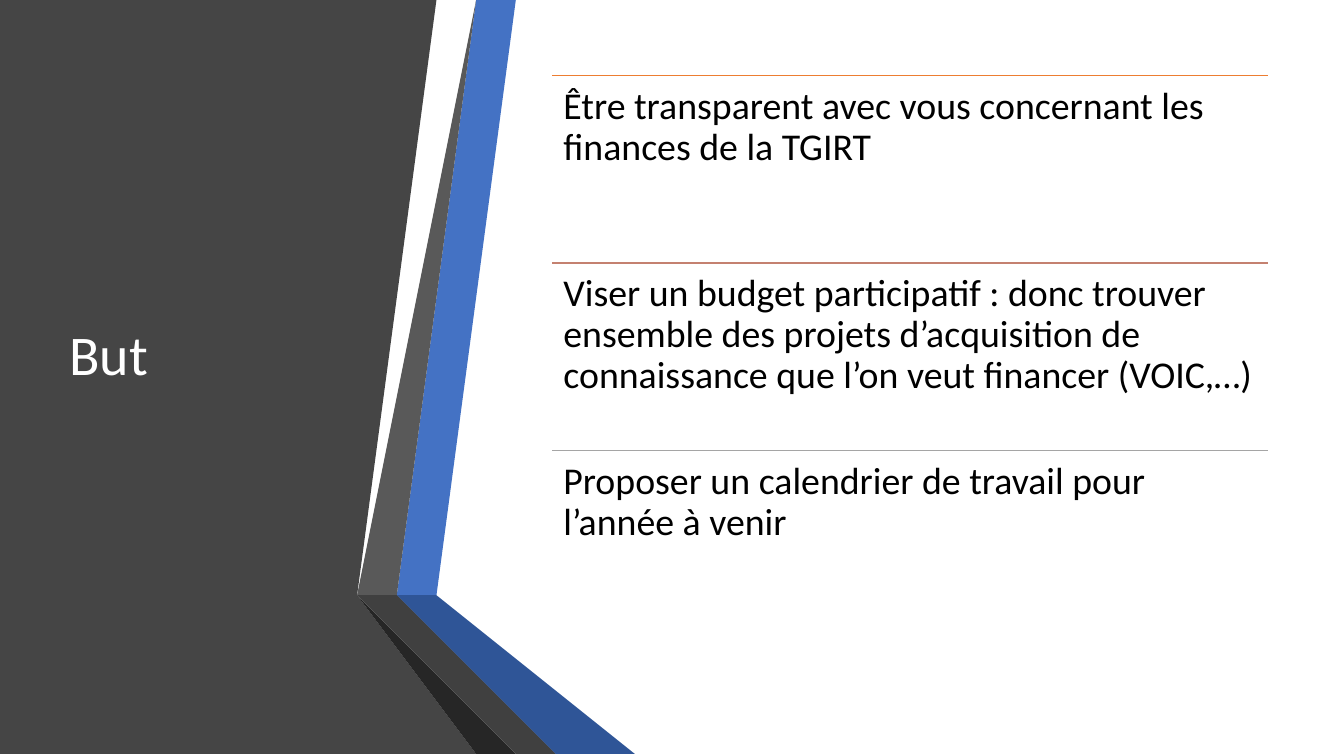
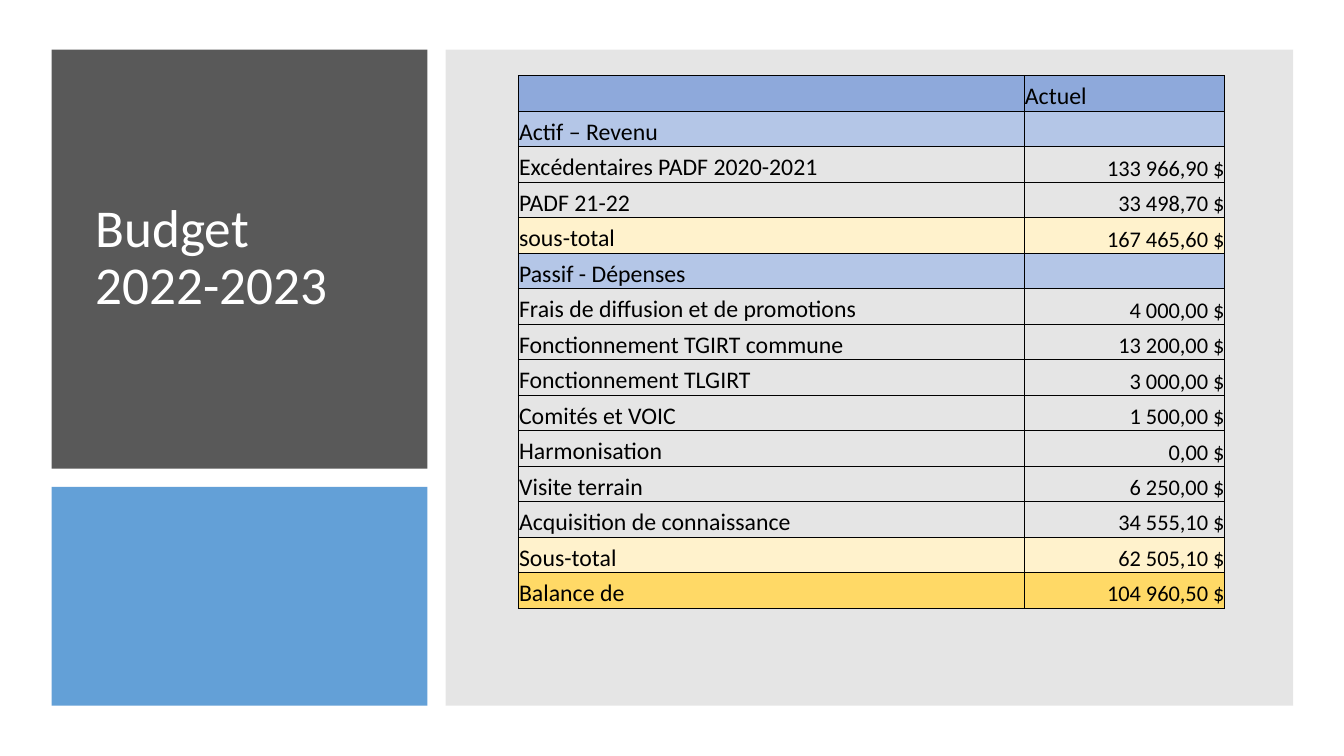
from lxml import etree
from pptx import Presentation
from pptx import util as u
from pptx.dml.color import RGBColor
from pptx.enum import shapes, text
from pptx.oxml.ns import qn

Cm, Pt = u.Cm, u.Pt
FONT = "Calibri"
WHITE = RGBColor(0xFF, 0xFF, 0xFF)
BLACK = RGBColor(0x00, 0x00, 0x00)
PANEL = RGBColor(0x45, 0x45, 0x45)
GREY = RGBColor(0x59, 0x59, 0x59)
GREY_FOLD = RGBColor(0x40, 0x40, 0x40)
GREY_EDGE = RGBColor(0x26, 0x26, 0x26)
BLUE = RGBColor(0x44, 0x72, 0xC4)
BLUE_FOLD = RGBColor(0x2F, 0x55, 0x97)
BLUE_EDGE = RGBColor(0x20, 0x38, 0x64)
SKY = RGBColor(0x5B, 0x9B, 0xD5)
MID_GREY = RGBColor(0x80, 0x80, 0x80)
ORANGE = RGBColor(0xED, 0x7D, 0x31)
ROSE = RGBColor(0xC4, 0x81, 0x70)
SILVER = RGBColor(0xA5, 0xA5, 0xA5)
HEADER = RGBColor(0x8E, 0xA9, 0xDB)
SECTION = RGBColor(0xB4, 0xC6, 0xE7)
SUBTOTAL = RGBColor(0xFF, 0xF2, 0xCC)
BALANCE = RGBColor(0xFF, 0xD9, 0x66)

WIDTH, HEIGHT = 33.87, 19.05

# Content: goals with the colour of the rule above each
GOALS = [
    ("Être transparent avec vous concernant les finances de la TGIRT", ORANGE),
    ("Viser un budget participatif : donc trouver ensemble des projets "
     "d’acquisition de connaissance que l’on veut financer (VOIC,…)", ROSE),
    ("Proposer un calendrier de travail pour l’année à venir", SILVER),
]

# Content: budget rows as label, amount, fill
BUDGET = [
    ("", "Actuel", HEADER),
    ("Actif – Revenu", "", SECTION),
    ("Excédentaires PADF 2020-2021", "133 966,90 $", None),
    ("PADF 21-22", "33 498,70 $", None),
    ("sous-total", "167 465,60 $", SUBTOTAL),
    ("Passif - Dépenses", "", SECTION),
    ("Frais de diffusion et de promotions", "4 000,00 $", None),
    ("Fonctionnement TGIRT commune", "13 200,00 $", None),
    ("Fonctionnement TLGIRT", "3 000,00 $", None),
    ("Comités et VOIC", "1 500,00 $", None),
    ("Harmonisation", "0,00 $", None),
    ("Visite terrain", "6 250,00 $", None),
    ("Acquisition de connaissance", "34 555,10 $", None),
    ("Sous-total", "62 505,10 $", SUBTOTAL),
    ("Balance de", "104 960,50 $", BALANCE),
]

# Folded ribbon: outlines in centimetres, from back to front
RIBBON = [
    (PANEL, [(0, 0), (11.4, 0), (9.04, 14.62), (12.24, HEIGHT), (0, HEIGHT)]),
    (BLUE, [(10.06, 14.68), (10.74, 14.81), (13.18, 0), (12.47, 0)]),
    (GREY, [(12.32, 0), (11.61, 0), (9.22, 14.55), (9.91, 14.66)]),
    (GREY_EDGE, [(9.22, 14.55), (12.47, HEIGHT), (12.62, HEIGHT)]),
    (BLUE_EDGE, [(10.06, 14.71), (14.07, HEIGHT), (14.22, HEIGHT)]),
    (BLUE_FOLD, [(10.06, 14.68), (14.22, HEIGHT), (15.98, HEIGHT), (10.74, 14.81)]),
    (GREY_FOLD, [(9.22, 14.55), (12.62, HEIGHT), (13.92, HEIGHT),
                 (10.03, 14.81), (9.91, 14.66)]),
]


def paint(shape, color, opacity=100):
    shape.shadow.inherit = False
    shape.fill.solid()
    shape.fill.fore_color.rgb = color
    shape.line.fill.background()
    if opacity < 100:
        srgb = shape.fill._xPr.find(".//" + qn("a:srgbClr"))
        etree.SubElement(srgb, qn("a:alpha"), val=str(opacity * 1000))


def add_polygon(page, color, points):
    builder = page.shapes.build_freeform(*points[0], scale=float(Cm(1)))
    builder.add_line_segments(points[1:], close=True)
    paint(builder.convert_to_shape(), color)


def add_tile(page, left, top, width, height, color, opacity=100):
    tile = page.shapes.add_shape(shapes.MSO_SHAPE.RECTANGLE, Cm(left), Cm(top),
                                 Cm(width), Cm(height))
    paint(tile, color, opacity)


def add_span(para, words, size, color):
    span = para.add_run()
    span.text = words
    span.font.name = FONT
    span.font.size = Pt(size)
    span.font.color.rgb = color


def add_text(page, area, lines, size, color, anchor):
    box = page.shapes.add_textbox(*[Cm(length) for length in area])
    frame = box.text_frame
    frame.word_wrap = True
    frame.vertical_anchor = anchor
    para = frame.paragraphs[0]
    para.line_spacing = 0.9
    for index, line in enumerate(lines):
        if index:
            para.add_line_break()
        add_span(para, line, size, color)
    return frame


def add_title(page, area, lines, size):
    add_text(page, area, lines, size, WHITE, text.MSO_ANCHOR.MIDDLE)


def add_rule(page, left, top, width, color):
    rule = page.shapes.add_connector(shapes.MSO_CONNECTOR.STRAIGHT, Cm(left), Cm(top),
                                     Cm(left + width), Cm(top))
    rule.line.color.rgb = color
    rule.line.width = Pt(1)
    etree.SubElement(rule._element.spPr, qn("a:effectLst"))


def add_borders(cell):
    props = cell._tc.get_or_add_tcPr()
    for index, side in enumerate(("lnL", "lnR", "lnT", "lnB")):
        border = etree.Element(qn("a:" + side), w=str(Pt(0.5)))
        fill = etree.SubElement(border, qn("a:solidFill"))
        etree.SubElement(fill, qn("a:srgbClr"), val=str(BLACK))
        props.insert(index, border)


def fill_cell(cell, words, color, is_amount):
    cell.vertical_anchor = text.MSO_ANCHOR.BOTTOM
    inset = Cm(0 if is_amount else 0.02)
    cell.margin_left = cell.margin_right = cell.margin_top = inset
    cell.margin_bottom = 0
    if color is None:
        cell.fill.background()
    else:
        cell.fill.solid()
        cell.fill.fore_color.rgb = color
    add_borders(cell)
    if words:
        para = cell.text_frame.paragraphs[0]
        if is_amount:
            para.alignment = text.PP_ALIGN.RIGHT
        add_span(para, words, 16 if is_amount else 17, BLACK)


def build_goals(page):
    for color, points in RIBBON:
        add_polygon(page, color, points)
    add_title(page, (1.5, 1.91, 7.72, 14.17), ["But"], 40)

    # Ruled list at an even pitch
    left, top, width, pitch = 13.92, 1.91, 18.03, 4.72
    for index, (goal, color) in enumerate(GOALS):
        row_top = top + index * pitch
        add_rule(page, left, row_top, width, color)
        frame = add_text(page, (left, row_top, width, pitch), [goal], 27, BLACK,
                         text.MSO_ANCHOR.TOP)
        frame.margin_left = frame.margin_right = Cm(0.28)
        frame.margin_top = frame.margin_bottom = Cm(0.28)


def build_budget(page):
    # Tiles: title over accent on the left, table panel on the right
    left, top, gap = 1.3, 1.25, 0.46
    side_width, title_height, accent_height = 9.47, 10.56, 5.51
    panel_left = left + side_width + gap
    add_tile(page, left, top, side_width, title_height, GREY)
    add_title(page, (2.16, 2.03, 7.9, 8.99), ["Budget", "2022-2023"], 38)
    add_tile(page, left, top + title_height + gap, side_width, accent_height, SKY, 95)
    add_tile(page, panel_left, top, 21.36, title_height + gap + accent_height,
             MID_GREY, 20)

    # Budget table
    columns = (12.75, 5.05)
    table = page.shapes.add_table(len(BUDGET), len(columns), Cm(13.06), Cm(1.91),
                                  Cm(sum(columns)), Cm(13.42)).table
    table.first_row = table.horz_banding = False
    for column, width in zip(table.columns, columns):
        column.width = Cm(width)
    for row, (label, amount, color) in enumerate(BUDGET):
        fill_cell(table.cell(row, 0), label, color, False)
        fill_cell(table.cell(row, 1), amount, color, amount.endswith("$"))


def main():
    deck = Presentation()
    deck.slide_width, deck.slide_height = Cm(WIDTH), Cm(HEIGHT)
    for build in (build_goals, build_budget):
        build(deck.slides.add_slide(deck.slide_layouts[6]))
    deck.save("out.pptx")


if __name__ == "__main__":
    main()
